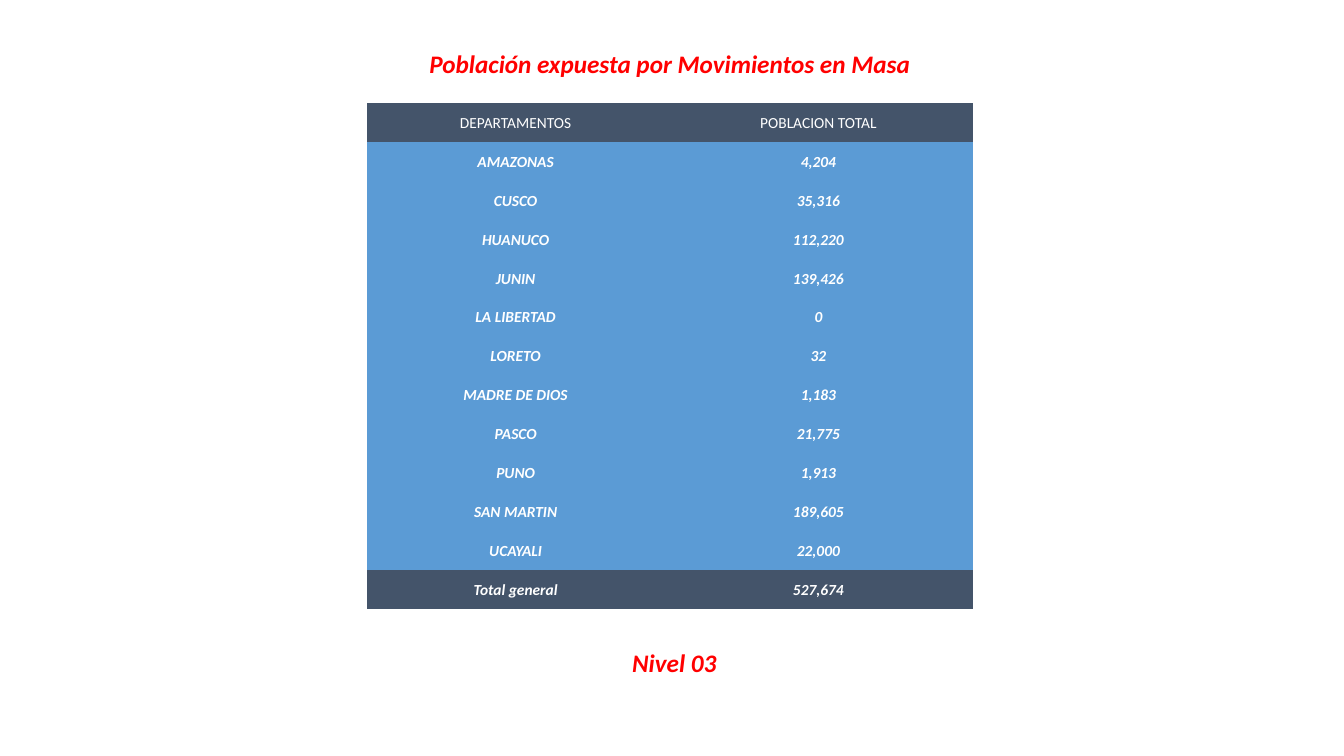
from pptx import Presentation
from pptx.dml.color import RGBColor
from pptx.enum.text import MSO_ANCHOR as Anchor, MSO_AUTO_SIZE as AutoSize, PP_ALIGN as Align
from pptx.oxml.ns import qn
from pptx.util import Cm, Pt

POPULATION = [
    ("DEPARTAMENTOS", "POBLACION TOTAL"),
    ("AMAZONAS", "4,204"),
    ("CUSCO", "35,316"),
    ("HUANUCO", "112,220"),
    ("JUNIN", "139,426"),
    ("LA LIBERTAD", "0"),
    ("LORETO", "32"),
    ("MADRE DE DIOS", "1,183"),
    ("PASCO", "21,775"),
    ("PUNO", "1,913"),
    ("SAN MARTIN", "189,605"),
    ("UCAYALI", "22,000"),
    ("Total general", "527,674"),
]
NO_GRID_STYLE = "{2D5ABB26-0587-4C30-8999-92F81FD0307C}"


def color(hex_value):
    return RGBColor.from_string(hex_value)


def write(frame, text, size=18, ink="FF0000", bold=True, italic=True, font="Calibri"):
    paragraph = frame.paragraphs[0]
    paragraph.alignment = Align.CENTER
    run = paragraph.add_run()
    run.text = text
    run.font.name, run.font.size = font, Pt(size)
    run.font.bold, run.font.italic = bold, italic
    run.font.color.rgb = color(ink)


class SlideBuilder:
    dark, light, white = "44546A", "5B9BD5", "FFFFFF"

    def __init__(self, slide):
        self.slide = slide

    def heading(self, shape, text, wrap):
        frame = shape.text_frame
        frame.word_wrap = wrap
        frame.auto_size = AutoSize.SHAPE_TO_FIT_TEXT
        frame.vertical_anchor = Anchor.TOP
        write(frame, text)

    def title(self, text, left, top, width, height):
        shape = self.slide.shapes.title
        shape.left, shape.top = Cm(left), Cm(top)
        shape.width, shape.height = Cm(width), Cm(height)
        self.heading(shape, text, wrap=False)

    def label(self, text, left, top, width, height):
        box = self.slide.shapes.add_textbox(Cm(left), Cm(top), Cm(width), Cm(height))
        self.heading(box, text, wrap=True)

    def table(self, rows, left, top, column_widths, row_height):
        table = self.slide.shapes.add_table(
            len(rows), len(column_widths), Cm(left), Cm(top),
            Cm(sum(column_widths)), Cm(row_height * len(rows))).table
        table.first_row = table.horz_banding = False
        table._tbl.tblPr.find(qn("a:tableStyleId")).text = NO_GRID_STYLE
        for column, width in zip(table.columns, column_widths):
            column.width = Cm(width)
        last = len(rows) - 1
        for row_index, values in enumerate(rows):
            table.rows[row_index].height = Cm(row_height)
            fill = self.dark if row_index in (0, last) else self.light
            for column_index, value in enumerate(values):
                self.cell(table.cell(row_index, column_index), value, fill,
                          emphasis=row_index > 0)

    def cell(self, cell, text, fill, emphasis):
        cell.fill.solid()
        cell.fill.fore_color.rgb = color(fill)
        cell.vertical_anchor = Anchor.MIDDLE
        cell.margin_left = cell.margin_top = cell.margin_right = Cm(0.03)
        cell.margin_bottom = 0
        write(cell.text_frame, text, size=11, ink=self.white,
              bold=emphasis, italic=emphasis)


def main():
    presentation = Presentation()
    presentation.slide_width, presentation.slide_height = Cm(33.87), Cm(19.05)
    title_only = presentation.slide_layouts[5]
    builder = SlideBuilder(presentation.slides.add_slide(title_only))

    # Headings above and below the table
    builder.title("Población expuesta por Movimientos en Masa", 10.49, 1.09, 12.78, 1.02)
    builder.label("Nivel 03", 15.6, 16.18, 2.79, 1.02)

    # Population by department
    builder.table(POPULATION, 9.25, 2.6, column_widths=(7.49, 7.77), row_height=0.98)

    presentation.save("out.pptx")


if __name__ == "__main__":
    main()
